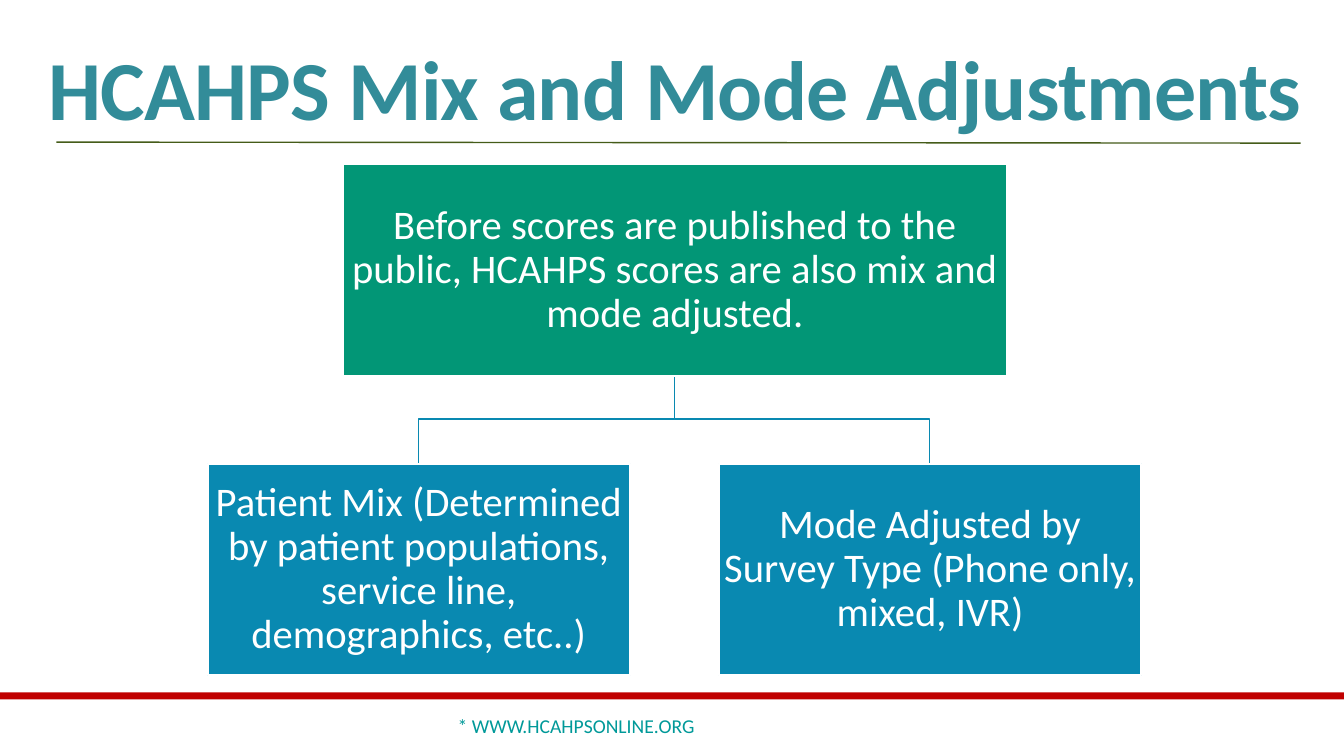
from pptx import Presentation
from pptx.dml.color import RGBColor
from pptx.enum.shapes import MSO_CONNECTOR, MSO_SHAPE
from pptx.enum.text import MSO_ANCHOR, MSO_AUTO_SIZE, PP_ALIGN
from pptx.oxml.ns import qn
from pptx.util import Pt
from lxml import etree

RECT = MSO_SHAPE.RECTANGLE
STRAIGHT = MSO_CONNECTOR.STRAIGHT
MIDDLE, BOTTOM = MSO_ANCHOR.MIDDLE, MSO_ANCHOR.BOTTOM
LEFT, CENTER = PP_ALIGN.LEFT, PP_ALIGN.CENTER

PX = 9144  # 100 px to the inch
FONT = "Calibri"
TITLE_ONLY = 5
COLORS = {
    "title": "328C99",
    "rule": "455C19",
    "band": "C00000",
    "parent": "029676",
    "child": "0989B1",
    "footer": "009999",
    "white": "FFFFFF",
}


def rgb(name):
    return RGBColor.from_string(COLORS[name])


def px(*lengths):
    return [n * PX for n in lengths]


def write(tf, text, size, color, align=CENTER, anchor=MIDDLE, spacing=1.0, bold=False):
    tf.word_wrap = True
    tf.vertical_anchor = anchor
    p = tf.paragraphs[0]
    p.alignment = align
    p.line_spacing = spacing
    p.space_before = Pt(0)
    r = p.add_run()
    r.text = text
    p.font.name, p.font.size, p.font.bold = FONT, Pt(size), bold
    p.font.color.rgb = rgb(color)
    return r


def add_rect(s, box, fill, line=None):
    sp = s.shapes.add_shape(RECT, *px(*box))
    sp.shadow.inherit = False
    sp.fill.solid()
    sp.fill.fore_color.rgb = rgb(fill)
    if line:
        sp.line.color.rgb = rgb(line)
        sp.line.width = Pt(1.25)
    else:
        sp.line.fill.background()
    return sp


def add_title(s, box, text):
    """Fill the title placeholder and draw the thin rule along its foot."""
    x, y, w, h = box
    sp = s.shapes.title
    sp.left, sp.top, sp.width, sp.height = px(*box)
    tf = sp.text_frame
    tf.auto_size = MSO_AUTO_SIZE.NONE
    tf.margin_right = 0
    r = write(tf, text, 60, "title", LEFT, BOTTOM, 0.85, True)
    r._r.get_or_add_rPr().set("spc", "-50")

    rule = s.shapes.add_connector(STRAIGHT, *px(x + 18, y + h - 1, x + w - 10, y + h))
    rule.line.color.rgb = rgb("rule")
    rule.line.width = Pt(1)
    etree.SubElement(rule._element.spPr, qn("a:effectLst"))


def add_branch(s, start, end):
    """Draw an elbow that runs down, across and down again."""
    (x1, y1), (x2, y2) = start, end
    mid = (y1 + y2) // 2
    builder = s.shapes.build_freeform(x1, y1, scale=PX)
    builder.add_line_segments([(x1, mid), (x2, mid), (x2, y2)], close=False)
    sp = builder.convert_to_shape()
    sp.shadow.inherit = False
    sp.fill.background()
    sp.line.color.rgb = rgb("child")
    sp.line.width = Pt(1.25)


def add_node(s, box, text, fill):
    tf = add_rect(s, box, fill, "white").text_frame
    tf.margin_left = tf.margin_right = tf.margin_top = tf.margin_bottom = 2 * PX
    write(tf, text, 29, "white", spacing=0.9)


def add_hierarchy(s, box, parent, children):
    """Centre the parent at the top and spread the children along the bottom."""
    x, y, w, h = box
    node_h, parent_w, child_w = 210, 659, 419
    center = x + w // 2
    child_top = y + h - node_h
    step = (w - child_w) // (len(children) - 1)
    lefts = [x + i * step for i in range(len(children))]
    for left in lefts:
        add_branch(s, (center, y + node_h), (left + child_w // 2, child_top))
    add_node(s, (center - parent_w // 2, y, parent_w, node_h), parent, "parent")
    for left, text in zip(lefts, children):
        add_node(s, (left, child_top, child_w, node_h), text, "child")


def add_footer(s, box, text):
    x, y, w, h = box
    add_rect(s, (x, y, w, 7), "band")
    sp = add_rect(s, (x + 189, y + 13, 765, 40), "white")
    write(sp.text_frame, text, 14, "footer")


def main():
    prs = Presentation()
    prs.slide_width, prs.slide_height = px(1333, 750)
    s = prs.slides.add_slide(prs.slide_layouts[TITLE_ONLY])
    add_title(s, (38, 31, 1262, 111), "HCAHPS Mix and Mode Adjustments")
    add_hierarchy(
        s,
        (206, 163, 926, 507),
        "Before scores are published to the public, HCAHPS scores are also "
        "mix and mode adjusted.",
        [
            "Patient Mix (Determined by patient populations, service line, "
            "demographics, etc..)",
            "Mode Adjusted by Survey Type (Phone only, mixed, IVR)",
        ],
    )
    add_footer(s, (0, 687, 1333, 63), "* WWW.HCAHPSONLINE.ORG")
    prs.save("out.pptx")


if __name__ == "__main__":
    main()
